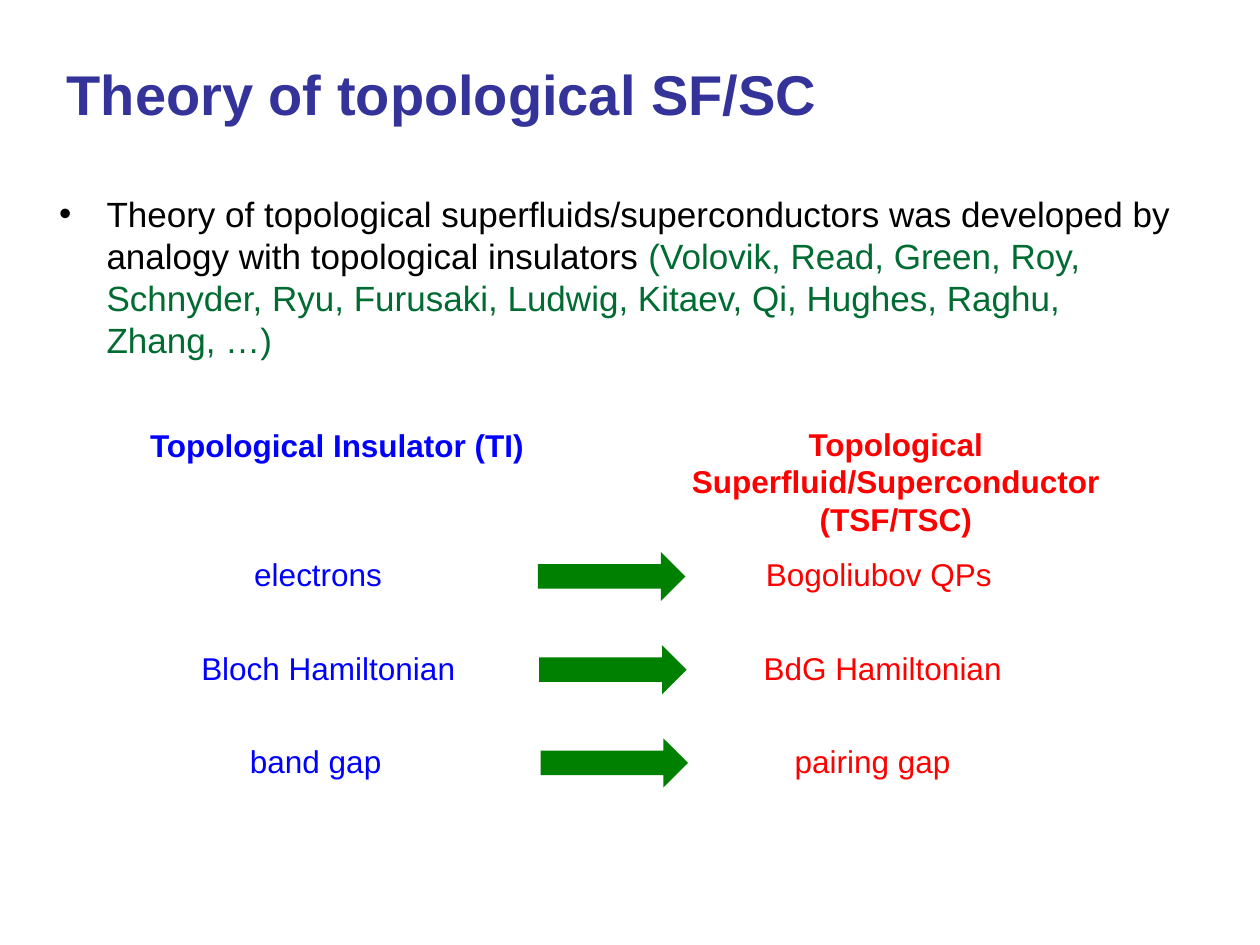
from pptx import Presentation
from pptx import util as u
from pptx.dml.color import RGBColor
from pptx.enum import shapes, text

BLACK = RGBColor(0x00, 0x00, 0x00)
NAVY = RGBColor(0x33, 0x33, 0x99)
DARK_GREEN = RGBColor(0x00, 0x6C, 0x31)
BLUE = RGBColor(0x00, 0x00, 0xFF)
RED = RGBColor(0xFF, 0x00, 0x00)
GREEN = RGBColor(0x00, 0x80, 0x00)


class SlideBuilder:
    font = "Arial"
    label_size = 18

    def __init__(self, slide):
        self.slide = slide

    def place(self, shape, left, top, width, height):
        shape.left, shape.top = u.Inches(left), u.Inches(top)
        shape.width, shape.height = u.Inches(width), u.Inches(height)

    def style(self, run, size, color, bold=False):
        run.font.name = self.font
        run.font.size = u.Pt(size)
        run.font.bold = bold
        run.font.color.rgb = color

    def title(self, wording, *box):
        heading = self.slide.shapes.title
        self.place(heading, *box)
        frame = heading.text_frame
        frame.text = wording
        frame.auto_size = text.MSO_AUTO_SIZE.NONE
        frame.vertical_anchor = text.MSO_ANCHOR.MIDDLE
        frame.paragraphs[0].alignment = text.PP_ALIGN.LEFT
        self.style(frame.paragraphs[0].runs[0], 32, NAVY, True)

    def bullet(self, parts, *box):
        body = self.slide.placeholders[1]
        self.place(body, *box)
        frame = body.text_frame
        frame.auto_size = text.MSO_AUTO_SIZE.NONE
        for wording, color in parts:
            run = frame.paragraphs[0].add_run()
            run.text = wording
            self.style(run, 20, color)

    def label(self, wording, color, left, top, width=3.17, height=0.4, bold=False):
        box = self.slide.shapes.add_textbox(
            u.Inches(left), u.Inches(top), u.Inches(width), u.Inches(height))
        frame = box.text_frame
        frame.word_wrap = True
        frame.text = wording
        frame.paragraphs[0].alignment = text.PP_ALIGN.CENTER
        self.style(frame.paragraphs[0].runs[0], self.label_size, color, bold)

    def arrow(self, left, top):
        arrow = self.slide.shapes.add_shape(
            shapes.MSO_SHAPE.RIGHT_ARROW,
            u.Inches(left), u.Inches(top), u.Inches(1.17), u.Inches(0.39))
        arrow.shadow.inherit = False
        arrow.fill.solid()
        arrow.fill.fore_color.rgb = GREEN
        arrow.line.fill.background()


def main():
    deck = Presentation()
    deck.slide_width, deck.slide_height = u.Inches(10), u.Inches(7.5)
    builder = SlideBuilder(deck.slides.add_slide(deck.slide_layouts[1]))

    builder.title("Theory of topological SF/SC", 0.43, 0.42, 7.68, 0.64)
    builder.bullet([
        ("Theory of topological superfluids/superconductors was developed by "
         "analogy with topological insulators ", BLACK),
        ("(Volovik, Read, Green, Roy, Schnyder, Ryu, Furusaki, Ludwig, Kitaev, "
         "Qi, Hughes, Raghu, Zhang, …)", DARK_GREEN),
    ], 0.37, 1.48, 9.05, 1.23)

    builder.label("Topological Insulator (TI)", BLUE, 1.09, 3.33, bold=True)
    builder.label("Topological Superfluid/Superconductor (TSF/TSC)", RED,
                  5.38, 3.32, 3.46, 0.71, bold=True)

    analogies = [
        ("electrons", 0.94, "Bogoliubov QPs", 5.39),
        ("Bloch Hamiltonian", 1.02, "BdG Hamiltonian", 5.42),
        ("band gap", 0.92, "pairing gap", 5.34),
    ]
    for row, (insulator, insulator_left, superfluid, superfluid_left) in enumerate(analogies):
        top = 4.36 + 0.74 * row
        builder.label(insulator, BLUE, insulator_left, top)
        builder.label(superfluid, RED, superfluid_left, top)
        builder.arrow(4.27 + 0.01 * row, top + 0.02)

    deck.save("out.pptx")


if __name__ == "__main__":
    main()
